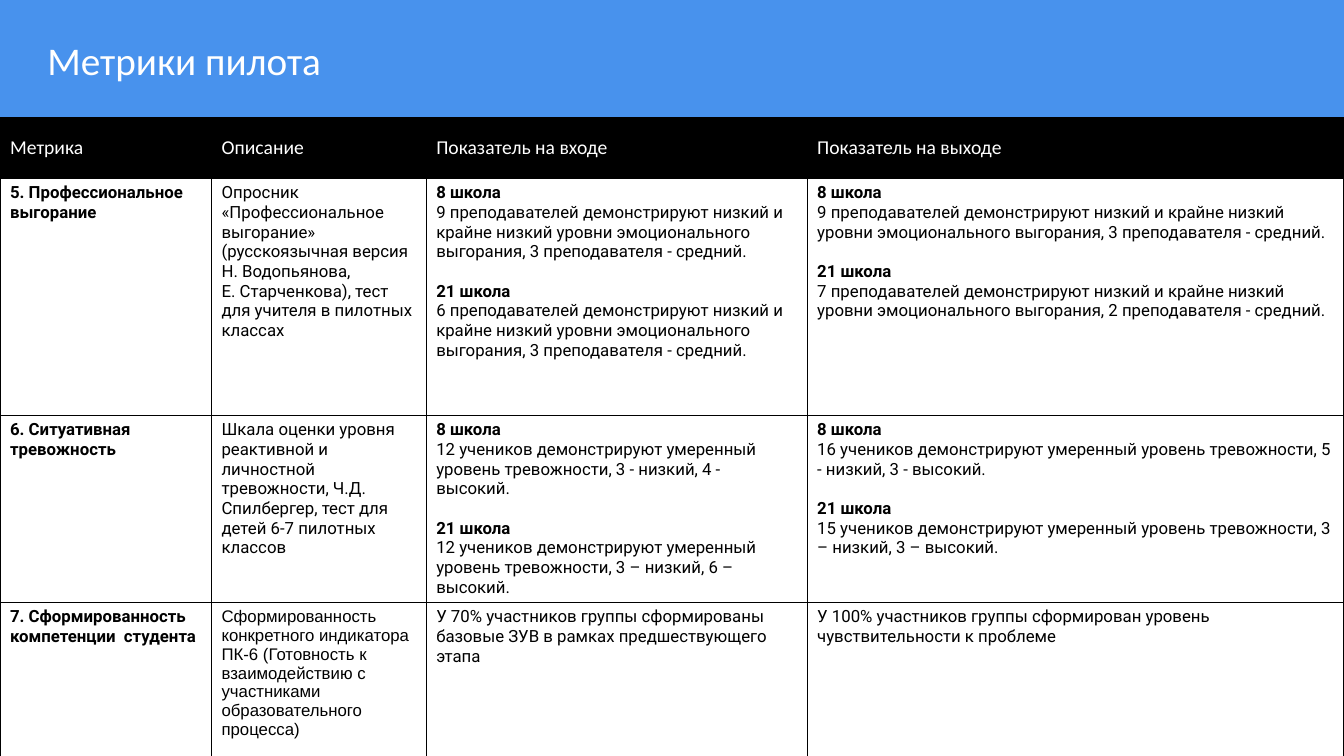
from lxml import etree
from pptx import Presentation
from pptx.dml.color import RGBColor
from pptx.enum.text import MSO_ANCHOR, MSO_AUTO_SIZE, PP_ALIGN
from pptx.oxml.ns import qn
from pptx.util import Cm, Pt

MIDDLE = MSO_ANCHOR.MIDDLE
TOP = MSO_ANCHOR.TOP
LEFT = PP_ALIGN.LEFT
NO_AUTOFIT = MSO_AUTO_SIZE.NONE
TITLE_ONLY = 5

BLUE = RGBColor(0x48, 0x92, 0xED)
BLACK = RGBColor(0x00, 0x00, 0x00)
WHITE = RGBColor(0xFF, 0xFF, 0xFF)

COLUMN_WIDTHS = [5.33, 5.41, 9.6, 13.53]
ROW_HEIGHTS = [1.52, 5.97, 4.7, 3.89]
HEADERS = ["Метрика", "Описание", "Показатель на входе", "Показатель на выходе"]


def burnout(low, medium):
    return (f"{low} преподавателей демонстрируют низкий и крайне низкий уровни "
            f"эмоционального выгорания, {medium} преподавателя - средний.")


def anxiety(moderate, low, high, dash):
    return (f"{moderate} учеников демонстрируют умеренный уровень тревожности, "
            f"{low} {dash} низкий, {high} {dash} высокий.")


def schools(school_8, school_21):
    return [("8 школа", True), (school_8, False), ("21 школа", True), (school_21, False)]


def plain(*texts):
    return [(text, False) for text in texts]


METRICS = [
    [
        [("5. Профессиональное выгорание", True)],
        plain("Опросник «Профессиональное выгорание» (русскоязычная версия Н. Водопьянова,",
              "Е. Старченкова), тест для учителя в пилотных классах"),
        schools(burnout(9, 3), burnout(6, 3)),
        schools(burnout(9, 3), burnout(7, 2)),
    ],
    [
        [("6. Ситуативная тревожность", True)],
        plain("Шкала оценки уровня реактивной и личностной тревожности, Ч.Д. Спилбергер, "
              "тест для детей 6-7 пилотных классов"),
        schools(anxiety(12, 3, 4, "-"), anxiety(12, 3, 6, "–")),
        schools(anxiety(16, 5, 3, "-"), anxiety(15, 3, 3, "–")),
    ],
    [
        [("7. Сформированность компетенции  студента", True)],
        plain("Сформированность конкретного индикатора ПК-6 (Готовность к взаимодействию "
              "с участниками образовательного процесса)"),
        plain("У 70% участников группы сформированы базовые ЗУВ в рамках предшествующего этапа"),
        plain("У 100% участников группы сформирован уровень чувствительности к проблеме"),
    ],
]


def add_run(p, text, size, font, color, bold=False):
    r = p.add_run()
    r.text = text
    r.font.size = Pt(size)
    r.font.name = font
    r.font.color.rgb = color
    r.font.bold = bold


def set_title(s, text):
    sp = s.shapes.title
    sp.left, sp.top, sp.width, sp.height = Cm(0.94), Cm(0.79), Cm(8.46), Cm(1.45)
    tf = sp.text_frame
    tf.word_wrap = True
    tf.auto_size = NO_AUTOFIT
    tf.vertical_anchor = MIDDLE
    p = tf.paragraphs[0]
    p.alignment = LEFT
    add_run(p, text, 28, "Calibri", WHITE)


def set_borders(cell):
    tc_pr = cell._tc.get_or_add_tcPr()
    for side in ("a:lnL", "a:lnR", "a:lnT", "a:lnB"):
        line = etree.SubElement(tc_pr, qn(side), w=str(Pt(1)))
        fill = etree.SubElement(line, qn("a:solidFill"))
        etree.SubElement(fill, qn("a:srgbClr"), val=str(BLACK))


def fill_cell(cell, paragraphs, size, font, color, background, anchor):
    set_borders(cell)
    cell.fill.solid()
    cell.fill.fore_color.rgb = background
    cell.vertical_anchor = anchor
    tf = cell.text_frame
    for i, (text, bold) in enumerate(paragraphs):
        p = tf.add_paragraph() if i else tf.paragraphs[0]
        if i and bold:
            p.space_before = Pt(14)
        add_run(p, text, size, font, color, bold)


def add_metrics_table(s):
    frame = s.shapes.add_table(len(ROW_HEIGHTS), len(COLUMN_WIDTHS), Cm(0), Cm(2.97),
                               Cm(sum(COLUMN_WIDTHS)), Cm(sum(ROW_HEIGHTS)))
    table = frame.table
    table.first_row = False
    table.horz_banding = False
    for column, width in zip(table.columns, COLUMN_WIDTHS):
        column.width = Cm(width)
    for row, height in zip(table.rows, ROW_HEIGHTS):
        row.height = Cm(height)
    for col, header in enumerate(HEADERS):
        fill_cell(table.cell(0, col), plain(header), 14, "Calibri", WHITE, BLACK, MIDDLE)
    for row, metric in enumerate(METRICS, 1):
        for col, paragraphs in enumerate(metric):
            font = "Arial" if (row, col) == (3, 1) else "Roboto"
            fill_cell(table.cell(row, col), paragraphs, 12, font, BLACK, WHITE, TOP)


def main():
    prs = Presentation()
    prs.slide_width, prs.slide_height = Cm(33.87), Cm(19.05)
    s = prs.slides.add_slide(prs.slide_layouts[TITLE_ONLY])
    s.background.fill.solid()
    s.background.fill.fore_color.rgb = BLUE
    set_title(s, "Метрики пилота")
    add_metrics_table(s)
    prs.save("out.pptx")


if __name__ == "__main__":
    main()
